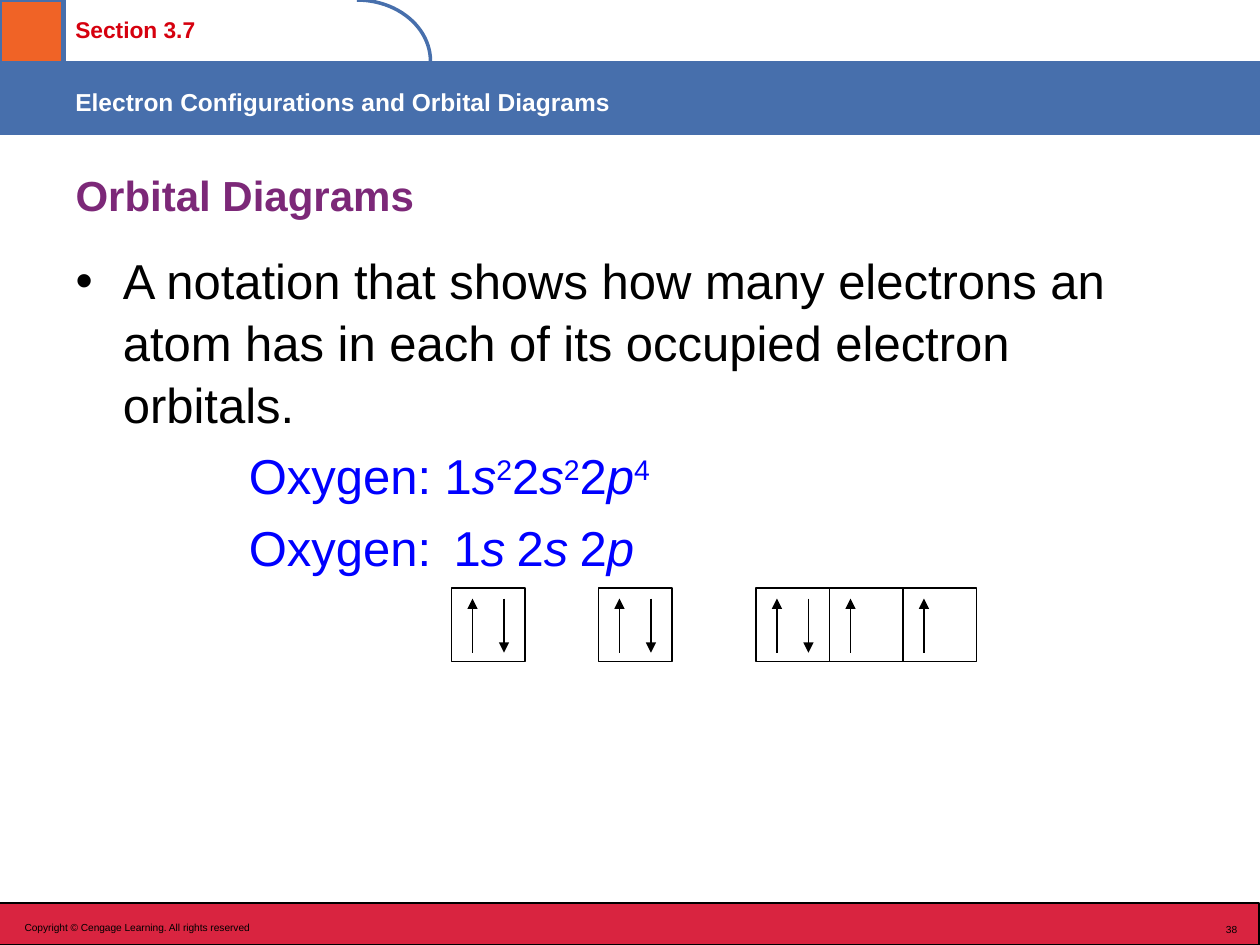
import pptx
import pptx.util
import pptx.dml.color
import pptx.enum.shapes
import pptx.enum.text
import pptx.oxml.ns
from lxml import etree

Pt = pptx.util.Pt
SHAPE = pptx.enum.shapes.MSO_SHAPE
ALIGN = pptx.enum.text.PP_ALIGN
ANCHOR = pptx.enum.text.MSO_ANCHOR
BLUE, RED, BLACK, FORMULA = "476FAC", "D92440", "000000", "0000FF"


def rgb(hex_color):
    return pptx.dml.color.RGBColor.from_string(hex_color)


def sub(parent, tag, **attrs):
    return etree.SubElement(parent, pptx.oxml.ns.qn(tag), **attrs)


def add_shape(s, kind, x, y, w, h, fill=None, line=BLACK, width=0.75):
    sp = s.shapes.add_shape(kind, Pt(x), Pt(y), Pt(w), Pt(h))
    sp.shadow.inherit = False
    if fill:
        sp.fill.solid()
        sp.fill.fore_color.rgb = rgb(fill)
    else:
        sp.fill.background()
    sp.line.color.rgb = rgb(line)
    sp.line.width = Pt(width)
    return sp


def add_run(p, text, size, color, bold=False, italic=False, raised=False):
    r = p.add_run()
    r.text = text
    r.font.name = "Arial"
    r.font.size = Pt(size)
    r.font.bold = bold
    r.font.italic = italic
    r.font.color.rgb = rgb(color)
    if raised:
        r._r.get_or_add_rPr().set("baseline", "30000")


def add_label(s, x, y, w, h, text, size, color, bold=False, align=ALIGN.LEFT):
    tf = s.shapes.add_textbox(Pt(x), Pt(y), Pt(w), Pt(h)).text_frame
    tf.word_wrap = True
    tf.vertical_anchor = ANCHOR.MIDDLE
    p = tf.paragraphs[0]
    p.alignment = align
    add_run(p, text, size, color, bold)


def place(sp, x, y, w, h, anchor):
    sp.left, sp.top, sp.width, sp.height = Pt(x), Pt(y), Pt(w), Pt(h)
    tf = sp.text_frame
    tf.word_wrap = True
    tf.auto_size = pptx.enum.text.MSO_AUTO_SIZE.NONE
    tf.vertical_anchor = anchor
    return tf


def set_indent(p, left, first):
    pPr = p._p.get_or_add_pPr()
    pPr.set("marL", str(Pt(left)))
    pPr.set("indent", str(Pt(first)))
    return pPr


def add_header(s, x, y, w):
    tab = 36
    # Blue band with the chapter heading
    add_shape(s, SHAPE.RECTANGLE, x, y + 35, w, 42, BLUE, BLUE)
    add_label(s, x + tab, y, 205, 34, "Section 3.7", 13, "D6000E", True)
    add_label(s, x + tab, y + 40, 684, 36,
              "Electron Configurations and Orbital Diagrams", 14, "FFFFFF", True)
    # Corner squares and the rounded end of the section tab
    add_shape(s, SHAPE.RECTANGLE, x + 1, y, tab, tab, "48A459", BLUE, 2)
    add_shape(s, SHAPE.ARC, x + 162, y, 84, 70, None, BLUE, 2)
    add_shape(s, SHAPE.RECTANGLE, x, y, tab, tab, "F06326", BLUE, 2)


def add_footer(s, x, y, w, h):
    add_shape(s, SHAPE.RECTANGLE, x - 0.5, y, w, h, RED)
    add_label(s, x + 7, y + 5, 462, 18,
              "Copyright © Cengage Learning. All rights reserved", 5.8, BLACK)
    add_label(s, x + 522, y + 6, 192, 18, "38", 5.8, BLACK, align=ALIGN.RIGHT)


def add_title(s, x, y, w, h):
    p = place(s.shapes.title, x, y, w, h, ANCHOR.MIDDLE).paragraphs[0]
    p.alignment = ALIGN.LEFT
    add_run(p, "Orbital Diagrams", 24, "7C2878", True)


def add_body(s, x, y, w, h):
    size, indent = 28, 99
    tf = place(s.placeholders[1], x, y, w, h, ANCHOR.TOP)

    # Definition
    p = tf.paragraphs[0]
    sub(set_indent(p, 27, -27), "a:buChar", char="•")
    add_run(p, "A notation that shows how many electrons an atom has in each "
            "of its occupied electron orbitals.", size, BLACK)

    # Electron configuration
    p = tf.add_paragraph()
    sub(set_indent(p, 0, indent), "a:buNone")
    add_run(p, "Oxygen: ", size, FORMULA)
    for shell, orbital, count in (("1", "s", "2"), ("2", "s", "2"), ("2", "p", "4")):
        add_run(p, shell, size, FORMULA)
        add_run(p, orbital, size, FORMULA, italic=True)
        add_run(p, count, size, FORMULA, raised=True)

    # Orbital labels, on tab stops above the boxes
    p = tf.add_paragraph()
    pPr = set_indent(p, 0, indent)
    sub(pPr, "a:buNone")
    stops = sub(pPr, "a:tabLst")
    add_run(p, "Oxygen:", size, FORMULA)
    for stop, shell, orbital in ((243, "1", "s"), (330.5, "2", "s"), (465, "2", "p")):
        sub(stops, "a:tab", pos=str(Pt(stop)), algn="l")
        add_run(p, "\t" + shell, size, FORMULA)
        add_run(p, orbital, size, FORMULA, italic=True)

    for i, p in enumerate(tf.paragraphs):
        p.alignment = ALIGN.LEFT
        p.line_spacing = 1.05
        p.space_before = Pt(5.6 if i else 0)


def add_arrow(s, x, y_from, y_to):
    c = s.shapes.add_connector(pptx.enum.shapes.MSO_CONNECTOR.STRAIGHT,
                               Pt(x), Pt(y_from), Pt(x), Pt(y_to))
    c.line.color.rgb = rgb(BLACK)
    c.line.width = Pt(0.75)
    sub(c.line._get_or_add_ln(), "a:tailEnd", type="triangle")
    sub(c._element.spPr, "a:effectLst")


def add_orbital(s, x, y, size, electrons):
    add_shape(s, SHAPE.RECTANGLE, x, y, size, size)
    top, bottom = y + 6, y + 37
    add_arrow(s, x + 12, bottom, top)
    if electrons == 2:
        add_arrow(s, x + 30, top, bottom)


def add_orbital_diagram(s, x, y, cell):
    # Each subshell: offset and the electrons in its boxes
    for offset, subshell in ((0, [2]), (84, [2]), (174, [2, 1, 1])):
        for i, electrons in enumerate(subshell):
            add_orbital(s, x + offset + i * cell, y, cell, electrons)


def main():
    prs = pptx.Presentation()
    prs.slide_width, prs.slide_height = Pt(720), Pt(540)
    s = prs.slides.add_slide(prs.slide_layouts[1])
    add_header(s, 0, 0, 720)
    add_footer(s, 0, 516, 720, 24)
    add_title(s, 36, 90, 648, 42)
    add_body(s, 36, 138, 648, 189)
    add_orbital_diagram(s, 258, 336, 42)
    prs.save("out.pptx")


if __name__ == "__main__":
    main()
